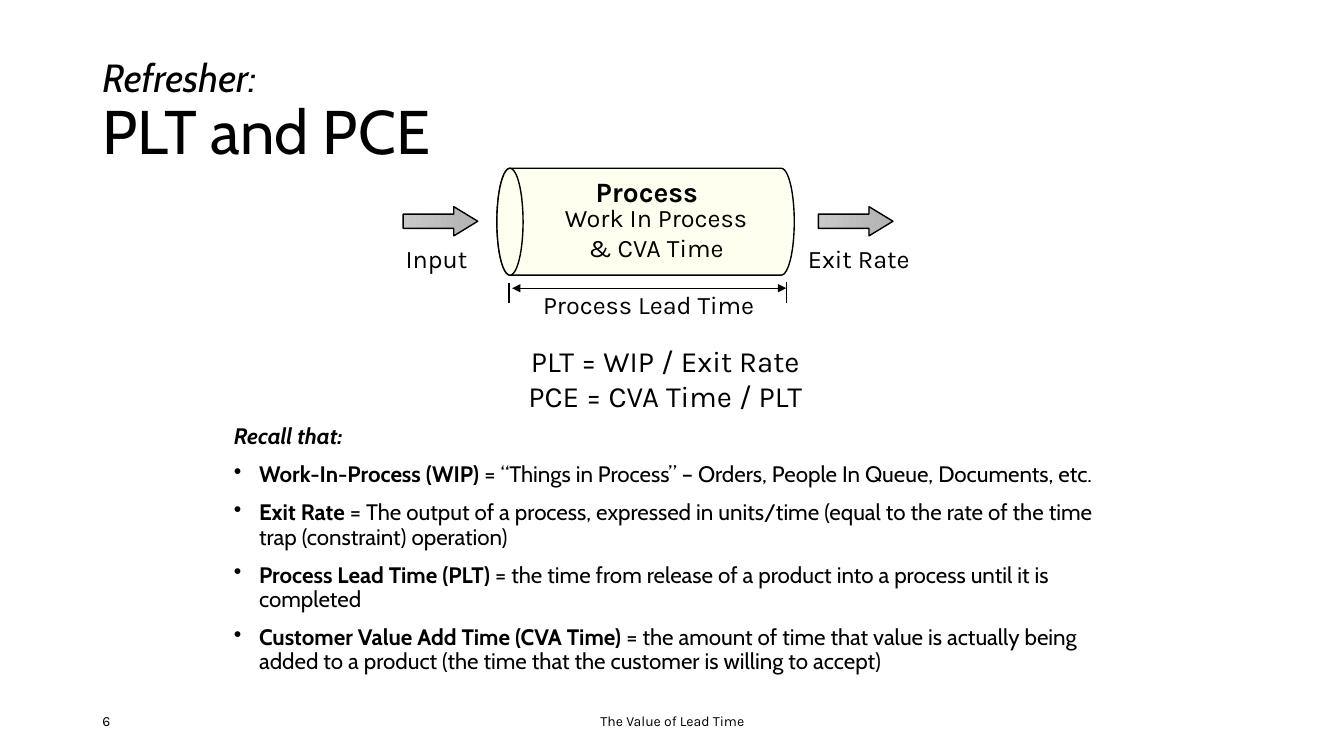
from dataclasses import dataclass
from math import cos, pi, sin

from lxml import etree
from pptx import Presentation
from pptx.dml.color import RGBColor
from pptx.enum.shapes import MSO_CONNECTOR, MSO_SHAPE
from pptx.enum.text import MSO_ANCHOR, PP_ALIGN
from pptx.oxml.ns import qn
from pptx.util import Pt

BLACK = RGBColor(0x00, 0x00, 0x00)
CREAM = RGBColor(0xFF, 0xFF, 0xEF)
LIGHT = RGBColor(0xC9, 0xC9, 0xC9)
GRAY = RGBColor(0xB2, 0xB2, 0xB2)
LEFT, CENTER = PP_ALIGN.LEFT, PP_ALIGN.CENTER
TOP, MIDDLE = MSO_ANCHOR.TOP, MSO_ANCHOR.MIDDLE
ARROW, STRAIGHT = MSO_SHAPE.RIGHT_ARROW, MSO_CONNECTOR.STRAIGHT
HEAD, BODY = "Cabin", "Karla"

TUBE_LEFT, TUBE_RIGHT, TUBE_MID = 364.32, 558, 158.4
RIM_X, RIM_Y, STEPS = 9.36, 38.16, 32
ARROW_TOP, ARROW_WIDE, ARROW_HIGH = 147.6, 53.3, 20.9
INDENT = 18


@dataclass(frozen=True)
class Label:
    text: str
    left: float
    top: float
    width: float
    height: float
    size: float
    align: PP_ALIGN = CENTER
    anchor: MSO_ANCHOR = MIDDLE
    bold: bool = False
    inset: float = 6.5


@dataclass(frozen=True)
class Rule:
    x1: float
    y1: float
    x2: float
    y2: float
    heads: bool = False


@dataclass(frozen=True)
class Term:
    name: str
    sense: str


LABELS = [
    Label("6", 66, 500.4, 216, 28.8, 10, LEFT, inset=7.2),
    Label("The Value of Lead Time", 318.24, 500.4, 324, 28.8, 10, inset=7.2),
    Label("PLT = WIP / Exit Rate\nPCE = CVA Time / PLT",
          251.3, 228.2, 447.8, 84.2, 21),
    Label("Process", 419, 121, 90, 30.2, 20, LEFT, TOP, True),
    Label("Work In Process\n& CVA Time", 382.3, 146.2, 172.8, 39.6, 18),
    Label("Process Lead Time", 369.4, 205.2, 187.9, 24.5, 18),
    Label("Input", 267.1, 175.7, 89.3, 17.3, 18),
    Label("Exit Rate", 568.8, 175.7, 89.3, 17.3, 18),
]

RULES = [
    Rule(363.6, 202.3, 363.6, 216.7),
    Rule(561.6, 201.6, 561.6, 216.7),
    Rule(365.8, 205.9, 561.6, 205.9, True),
]

TERMS = [
    Term("Work-In-Process (WIP)",
         " = “Things in Process” – Orders, People In Queue, Documents, etc."),
    Term("Exit Rate",
         " = The output of a process, expressed in units/time "
         "(equal to the rate of the time trap (constraint) operation)"),
    Term("Process Lead Time (PLT)",
         " = the time from release of a product into a process "
         "until it is completed"),
    Term("Customer Value Add Time (CVA Time)",
         " = the amount of time that value is actually being added to a "
         "product (the time that the customer is willing to accept)"),
]


def style(run, face: str, size: float, bold: bool = False,
          slant: bool = False) -> None:
    font = run.font
    font.name, font.size = face, Pt(size)
    font.bold, font.italic = bold, slant
    font.color.rgb = BLACK


def add_box(slide, left: float, top: float, width: float, height: float,
            anchor: MSO_ANCHOR, inset: float = 7.2):
    box = slide.shapes.add_textbox(Pt(left), Pt(top), Pt(width), Pt(height))
    frame = box.text_frame
    frame.word_wrap = True
    frame.vertical_anchor = anchor
    frame.margin_left = frame.margin_right = Pt(inset)
    frame.margin_top = frame.margin_bottom = Pt(3.6)
    return frame


def add_label(slide, label: Label) -> None:
    frame = add_box(slide, label.left, label.top, label.width, label.height,
                    label.anchor, label.inset)
    frame.text = label.text
    for para in frame.paragraphs:
        para.alignment = label.align
        for run in para.runs:
            style(run, BODY, label.size, label.bold)


def add_title(slide) -> None:
    para = add_box(slide, 66, 28.8, 828, 104.4, MIDDLE).paragraphs[0]
    para.text = "Refresher:\vPLT and PCE"
    para.line_spacing = 0.9
    small, large = para.runs
    style(small, HEAD, 28, slant=True)
    style(large, HEAD, 44)


def set_para(para, bullet: bool) -> None:
    para.line_spacing = 0.9
    para.space_before = Pt(10)
    props = para._p.get_or_add_pPr()
    props.set("marL", str(Pt(INDENT)))
    props.set("indent", str(-Pt(INDENT)))
    if bullet:
        etree.SubElement(props, qn("a:buChar")).set("char", "•")


def add_terms(slide) -> None:
    frame = add_box(slide, 160, 300.2, 639.4, 216, TOP)
    frame.text = "Recall that:"
    intro = frame.paragraphs[0]
    set_para(intro, False)
    style(intro.runs[0], HEAD, 16, True, True)
    for term in TERMS:
        para = frame.add_paragraph()
        para.text = term.name
        set_para(para, True)
        style(para.runs[0], HEAD, 16, True)
        run = para.add_run()
        run.text = term.sense
        style(run, HEAD, 16)


def add_edge(shape) -> None:
    shape.shadow.inherit = False
    shape.line.color.rgb = BLACK
    shape.line.width = Pt(1)


def add_arrow(slide, left: float) -> None:
    shape = slide.shapes.add_shape(ARROW, Pt(left), Pt(ARROW_TOP),
                                   Pt(ARROW_WIDE), Pt(ARROW_HIGH))
    shape.adjustments[0], shape.adjustments[1] = 0.49, 0.82
    shape.fill.gradient()
    shape.fill.gradient_angle = 0
    for stop, color in zip(shape.fill.gradient_stops, (LIGHT, GRAY)):
        stop.color.rgb = color
    add_edge(shape)


def get_arc(mid: float, start: float) -> list[tuple[int, int]]:
    turns = [start + pi * step / STEPS for step in range(STEPS + 1)]
    return [(Pt(mid + RIM_X * cos(turn)), Pt(TUBE_MID + RIM_Y * sin(turn)))
            for turn in turns]


def add_tube(slide) -> None:
    back = get_arc(TUBE_LEFT, pi / 2)
    for mid in (TUBE_RIGHT, TUBE_LEFT):
        points = back + get_arc(mid, -pi / 2)
        path = slide.shapes.build_freeform(*points[0])
        path.add_line_segments(points[1:], close=True)
        shape = path.convert_to_shape()
        shape.fill.solid()
        shape.fill.fore_color.rgb = CREAM
        add_edge(shape)


def add_rule(slide, rule: Rule) -> None:
    line = slide.shapes.add_connector(STRAIGHT, Pt(rule.x1), Pt(rule.y1),
                                      Pt(rule.x2), Pt(rule.y2))
    line.line.color.rgb = BLACK
    line.line.width = Pt(1)
    if rule.heads:
        for tag in ("a:headEnd", "a:tailEnd"):
            end = etree.SubElement(line.line._get_or_add_ln(), qn(tag))
            end.set("type", "triangle")
    etree.SubElement(line._element.spPr, qn("a:effectLst"))


def main() -> None:
    deck = Presentation()
    deck.slide_width, deck.slide_height = Pt(960), Pt(540)
    slide = deck.slides.add_slide(deck.slide_layouts[6])
    add_title(slide)
    add_terms(slide)
    add_tube(slide)
    for left in (288, 584.6):
        add_arrow(slide, left)
    for rule in RULES:
        add_rule(slide, rule)
    for label in LABELS:
        add_label(slide, label)
    deck.save("out.pptx")


if __name__ == "__main__":
    main()
